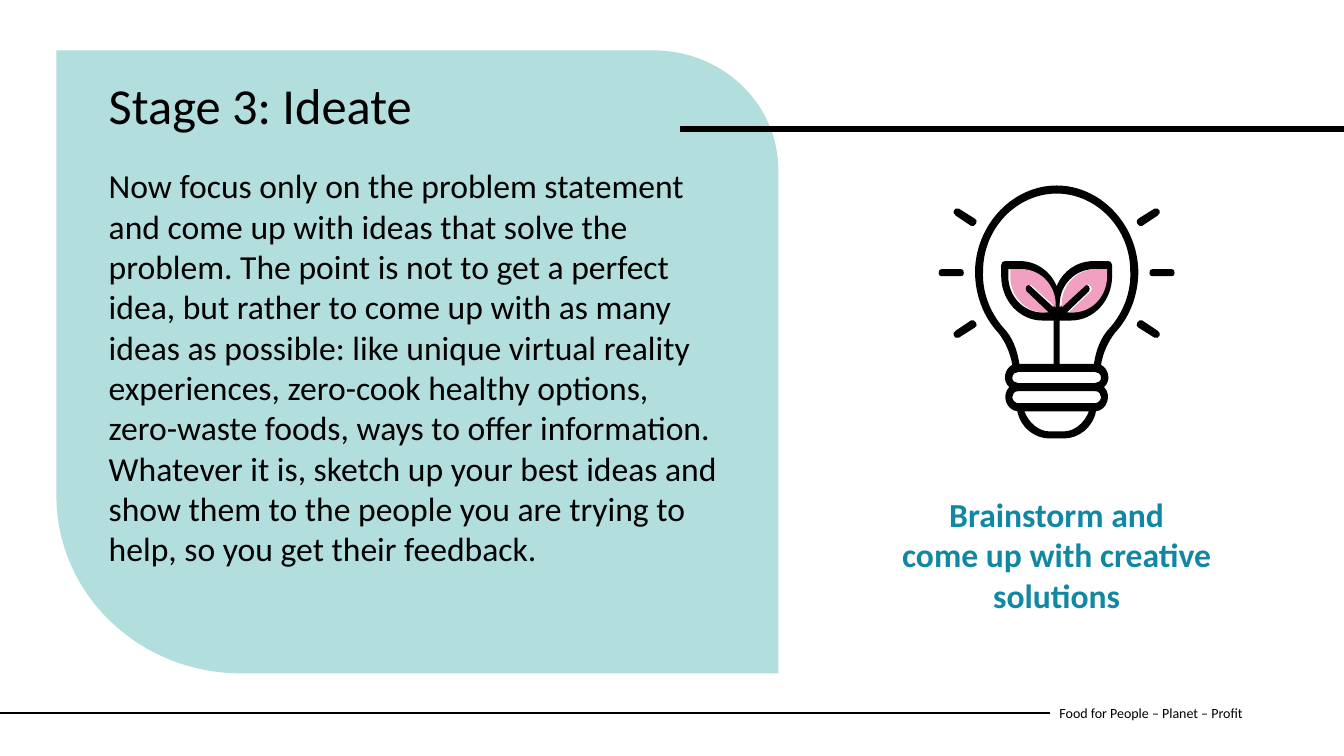
from lxml import etree
from pptx import Presentation
from pptx.dml.color import RGBColor
from pptx.enum.shapes import MSO_CONNECTOR, MSO_SHAPE
from pptx.enum.text import MSO_ANCHOR, PP_ALIGN
from pptx.oxml.ns import qn
from pptx.util import Inches, Pt

STRAIGHT = MSO_CONNECTOR.STRAIGHT
RECTANGLE = MSO_SHAPE.RECTANGLE
TOP, MIDDLE = MSO_ANCHOR.TOP, MSO_ANCHOR.MIDDLE
LEFT, CENTER = PP_ALIGN.LEFT, PP_ALIGN.CENTER

BLACK = RGBColor(0x00, 0x00, 0x00)
INK = RGBColor(0x01, 0x01, 0x01)
MINT = RGBColor(0xB2, 0xDE, 0xDD)
PINK = RGBColor(0xF1, 0xA0, 0xC2)
TEAL = RGBColor(0x11, 0x88, 0xA3)

AXIS = 10.48
RAY_LEVEL = 2.71

PANEL = [(7.72, 6.68), (2.39, 6.68), (1.38, 6.68, 0.56, 5.89, 0.56, 4.92),
         (0.56, 0.5), (6.48, 0.5), (7.17, 0.5, 7.72, 1.03, 7.72, 1.69)]
BULB_HALF = [(10.48, 1.84), (10.91, 1.84, 11.28, 2.22, 11.29, 2.69),
             (11.29, 2.92, 11.21, 3.14, 11.06, 3.3),
             (10.99, 3.39, 10.94, 3.5, 10.92, 3.62),
             (11, 3.66, 11.02, 3.78, 10.95, 3.84),
             (11.03, 3.92, 10.98, 4.07, 10.87, 4.08),
             (10.84, 4.24, 10.7, 4.35, 10.55, 4.35)]
GLASS_HALF = [(10.48, 1.92), (10.87, 1.92, 11.21, 2.26, 11.21, 2.69),
              (11.22, 2.9, 11.14, 3.1, 11.01, 3.25),
              (10.92, 3.34, 10.87, 3.47, 10.85, 3.61),
              (10.51, 3.61), (10.51, 3.18), (10.62, 3.18),
              (10.85, 3.18, 11.03, 2.98, 11.03, 2.74), (11.03, 2.63),
              (11.03, 2.6, 11.01, 2.59, 10.99, 2.59), (10.85, 2.59),
              (10.68, 2.59, 10.54, 2.69, 10.48, 2.84)]
LOWER_RING_HALF = [(10.48, 3.88), (10.86, 3.88), (10.9, 3.88, 10.92, 3.91, 10.92, 3.94),
                   (10.92, 3.97, 10.89, 4, 10.86, 4)]
UPPER_RING_HALF = [(10.48, 3.69), (10.86, 3.69), (10.89, 3.69, 10.92, 3.71, 10.92, 3.75),
                   (10.92, 3.78, 10.89, 3.8, 10.86, 3.8)]
BASE_HALF = [(10.48, 4.08), (10.8, 4.08), (10.76, 4.19, 10.66, 4.28, 10.55, 4.28)]
LEAF = [(10.8, 2.84), (10.79, 2.82, 10.76, 2.82, 10.75, 2.83), (10.51, 3.05),
        (10.51, 3.02), (10.51, 2.83, 10.66, 2.67, 10.85, 2.67), (10.96, 2.67),
        (10.96, 2.74), (10.96, 2.94, 10.81, 3.1, 10.62, 3.1), (10.58, 3.1),
        (10.8, 2.89), (10.81, 2.88, 10.81, 2.85, 10.8, 2.84)]
LEVEL_RAY = [(11.62, 2.67), (11.43, 2.67), (11.41, 2.67, 11.4, 2.68, 11.4, 2.71),
             (11.4, 2.73, 11.41, 2.74, 11.43, 2.74), (11.62, 2.74),
             (11.64, 2.74, 11.65, 2.73, 11.65, 2.71),
             (11.65, 2.68, 11.64, 2.67, 11.62, 2.67)]
LOW_RAY = [(11.48, 3.28), (11.33, 3.18), (11.31, 3.17, 11.29, 3.18, 11.28, 3.2),
           (11.27, 3.22, 11.27, 3.24, 11.29, 3.25), (11.45, 3.35),
           (11.47, 3.36, 11.49, 3.35, 11.5, 3.33), (11.51, 3.32, 11.5, 3.29, 11.48, 3.28)]


def place(steps, scale_x=1, shift_x=0, scale_y=1, shift_y=0):
    return [tuple(scale_y * value + shift_y if k % 2 else scale_x * value + shift_x
                  for k, value in enumerate(step)) for step in steps]


def draw(shapes, contours, color):
    builder = None
    for contour in contours:
        ends = [(Inches(step[-2]), Inches(step[-1])) for step in contour]
        if builder is None:
            builder = shapes.build_freeform(*ends[0], scale=1.0)
        else:
            builder.move_to(*ends[0])
        builder.add_line_segments(ends[1:], close=True)
    shape = builder.convert_to_shape()
    outline = next(shape._element.iter(qn("a:path")))
    segments = [segment for segment in outline if segment.tag != qn("a:close")]
    for segment, step in zip(segments, [step for contour in contours for step in contour]):
        if len(step) == 6:
            curve = etree.Element(qn("a:cubicBezTo"))
            for x, y in zip(step[::2], step[1::2]):
                etree.SubElement(curve, qn("a:pt"), x=str(Inches(x) - shape.left),
                                 y=str(Inches(y) - shape.top))
            outline.replace(segment, curve)
    shape.shadow.inherit = False
    shape.fill.solid()
    shape.fill.fore_color.rgb = color
    shape.line.fill.background()


presentation = Presentation()
presentation.slide_width = Inches(13.33)
presentation.slide_height = Inches(7.5)
slide = presentation.slides.add_slide(presentation.slide_layouts[6])

footer_line = slide.shapes.add_connector(
    STRAIGHT, Inches(0), Inches(7.07), Inches(10.41), Inches(7.07))
footer_line.line.color.rgb = BLACK
footer_line.line.width = Pt(1.5)
etree.SubElement(footer_line._element.spPr, qn("a:effectLst"))

draw(slide.shapes, [PANEL], MINT)

bar = slide.shapes.add_shape(RECTANGLE, Inches(6.76), Inches(1.26), Inches(6.57), Inches(0.04))
bar.shadow.inherit = False
bar.fill.solid()
bar.fill.fore_color.rgb = BLACK
bar.line.color.rgb = BLACK
bar.line.width = Pt(1.93)
etree.SubElement(bar.line._get_or_add_ln(), qn("a:miter"), lim="800000")

bulb = slide.shapes.add_group_shape().shapes
outlines = []
for half in (BULB_HALF, GLASS_HALF, LOWER_RING_HALF, UPPER_RING_HALF, BASE_HALF):
    mirrored = place(half, -1, 2 * AXIS)
    contour = half + [mirrored[-1][-2:]]
    for before, step in zip(mirrored[-2::-1], mirrored[:0:-1]):
        contour.append(step[2:4] + step[:2] + before[-2:] if len(step) == 6 else before[-2:])
    outlines.append(contour)
leaves = [LEAF, place(LEAF, -1, 2 * AXIS)]
draw(bulb, outlines + leaves, INK)

for ray in (LEVEL_RAY, LOW_RAY, place(LOW_RAY, 1, 0, -1, 2 * RAY_LEVEL)):
    draw(bulb, [ray], INK)
    draw(bulb, [place(ray, -1, 2 * AXIS)], INK)
for leaf in leaves:
    draw(bulb, [place(leaf, 1, 0.02)], PINK)

IDEATE_TEXT = (
    "Now focus only on the problem statement and come up with ideas that solve the problem. "
    "The point is not to get a perfect idea, but rather to come up with as many ideas as "
    "possible: like unique virtual reality experiences, zero-cook healthy options, zero-waste "
    "foods, ways to offer information. Whatever it is, sketch up your best ideas and show them "
    "to the people you are trying to help, so you get their feedback.")

texts = [
    (10.41, 6.87, 2.73, 0.4, ["Food for People – Planet – Profit"],
     10, BLACK, False, LEFT, MIDDLE, 1.0, 0),
    (0.98, 0.75, 5.46, 1.09, ["Stage 3: Ideate"], 36, BLACK, False, LEFT, TOP, 0.9, 10),
    (0.98, 1.59, 6.28, 4.55, [IDEATE_TEXT], 24, BLACK, False, LEFT, TOP, 1.0, 10),
    (8.29, 4.85, 4.38, 1.31, ["Brainstorm and", "come up with creative", "solutions"],
     24, TEAL, True, CENTER, TOP, 1.0, 0),
]
for left, top, width, height, lines, size, color, bold, align, anchor, spacing, before in texts:
    box = slide.shapes.add_textbox(Inches(left), Inches(top), Inches(width), Inches(height))
    frame = box.text_frame
    frame.word_wrap = True
    frame.vertical_anchor = anchor
    for i, line in enumerate(lines):
        paragraph = frame.add_paragraph() if i else frame.paragraphs[0]
        paragraph.alignment = align
        paragraph.line_spacing = spacing
        paragraph.space_before = Pt(before)
        run = paragraph.add_run()
        run.text = line
        run.font.name = "Calibri"
        run.font.size = Pt(size)
        run.font.bold = bold
        run.font.color.rgb = color

presentation.save("out.pptx")
